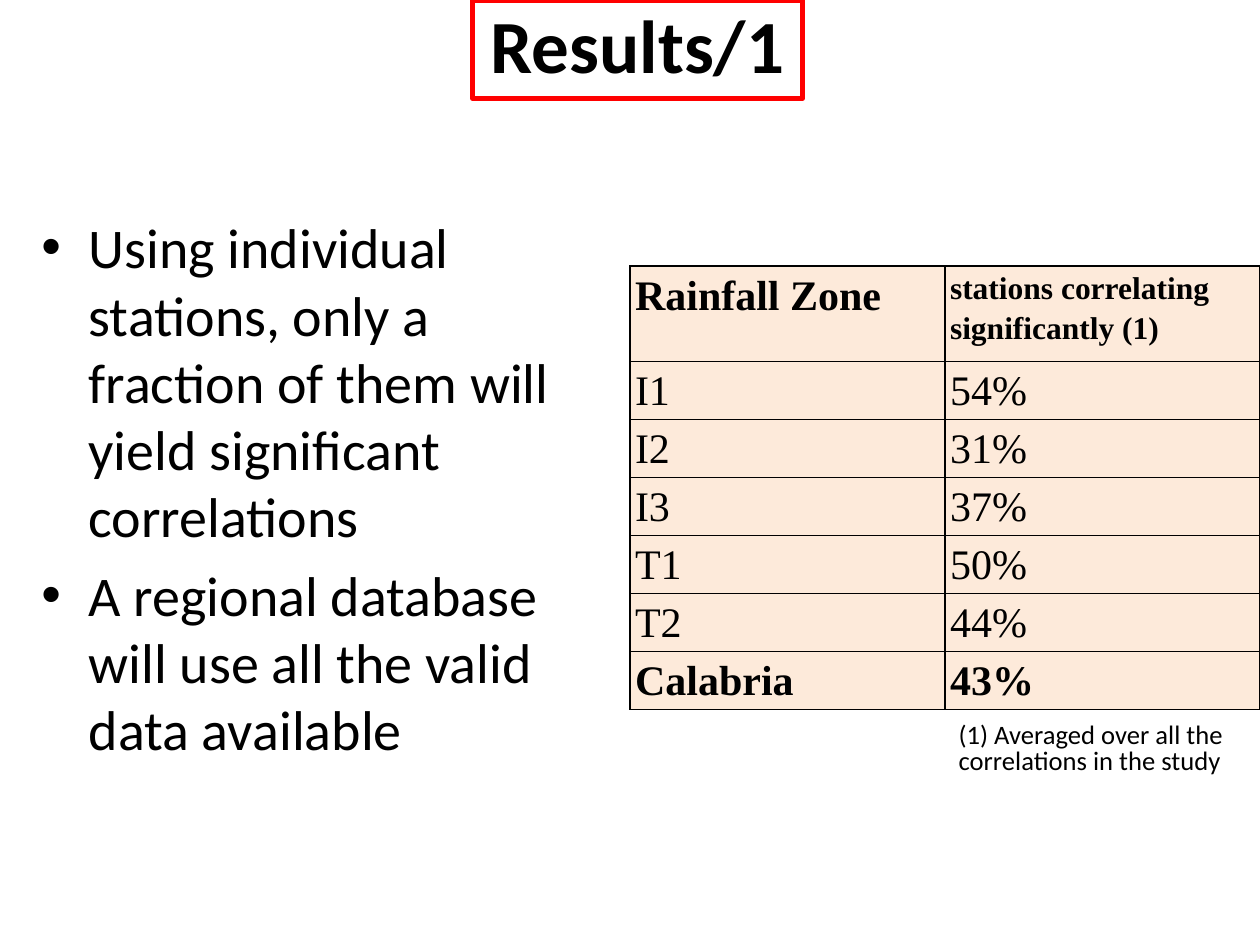
from lxml.etree import SubElement
from pptx import Presentation
from pptx.dml.color import RGBColor
from pptx.enum.shapes import MSO_SHAPE
from pptx.enum.text import MSO_ANCHOR, PP_ALIGN
from pptx.oxml.ns import qn
from pptx.util import Inches, Pt

BLACK = RGBColor(0x00, 0x00, 0x00)
RED = RGBColor(0xFF, 0x00, 0x00)
PEACH = RGBColor(0xFD, 0xEA, 0xDA)

# The page is a grid of 100 columns by 75 rows of square units.
UNIT = Inches(0.1)

BULLETS = [
    "Using individual stations, only a fraction of them will yield "
    "significant correlations",
    "A regional database will use all the valid data available",
]
ZONES = [
    ("Rainfall Zone", "stations correlating significantly (1)"),
    ("I1", "54%"),
    ("I2", "31%"),
    ("I3", "37%"),
    ("T1", "50%"),
    ("T2", "44%"),
    ("Calabria", "43%"),
]


def units(*counts):
    """Turn grid units into lengths."""
    return [round(count * UNIT) for count in counts]


def add_span(para, text, size, font="Calibri", bold=False):
    span = para.add_run()
    span.text = text
    span.font.name = font
    span.font.size = Pt(size)
    span.font.bold = bold
    span.font.color.rgb = BLACK


def indent(para, left, first):
    """Set the left margin and first-line indent, in grid units."""
    margin, hanging = units(left, first)
    properties = para._p.get_or_add_pPr()
    properties.set("marL", str(margin))
    properties.set("indent", str(hanging))
    return properties


def add_text_frame(page, box):
    frame = page.shapes.add_textbox(*units(*box)).text_frame
    frame.word_wrap = True
    return frame


def add_title(page, box, text):
    title = page.shapes.add_shape(MSO_SHAPE.RECTANGLE, *units(*box))
    title.shadow.inherit = False
    title.fill.background()
    title.line.color.rgb = RED
    title.line.width = Pt(3)
    frame = title.text_frame
    frame.word_wrap = True
    frame.vertical_anchor = MSO_ANCHOR.MIDDLE
    para = frame.paragraphs[0]
    para.alignment = PP_ALIGN.CENTER
    para.line_spacing = 0.9
    add_span(para, text, 42.9, bold=True)


def add_bullets(page, box, items):
    frame = add_text_frame(page, box)
    for index, item in enumerate(items):
        para = frame.add_paragraph() if index else frame.paragraphs[0]
        properties = indent(para, 3.75, -3.75)
        SubElement(properties, qn("a:buFont")).set("typeface", "Arial")
        SubElement(properties, qn("a:buChar")).set("char", "•")
        if index:
            para.space_before = Pt(6.4)
        add_span(para, item, 32)


def outline_cell(cell):
    properties = cell._tc.get_or_add_tcPr()
    for side in ("a:lnL", "a:lnR", "a:lnT", "a:lnB"):
        line = SubElement(properties, qn(side))
        line.set("w", str(Pt(1)))
        fill = SubElement(line, qn("a:solidFill"))
        SubElement(fill, qn("a:srgbClr")).set("val", str(BLACK))


def add_zone_table(page, box, rows):
    header_height, row_height = units(7.6, 4.2)
    table = page.shapes.add_table(len(rows), len(rows[0]), *units(*box)).table
    last = len(rows) - 1
    for r, values in enumerate(rows):
        table.rows[r].height = row_height if r else header_height
        for c, value in enumerate(values):
            cell = table.cell(r, c)
            outline_cell(cell)
            cell.fill.solid()
            cell.fill.fore_color.rgb = PEACH
            cell.margin_left, cell.margin_right = units(0.4, 0.4)
            cell.margin_top = cell.margin_bottom = 0
            para = cell.text_frame.paragraphs[0]
            para.line_spacing = 1.15
            size = 18 if (r, c) == (0, 1) else 24
            add_span(para, value, size, "Times New Roman", r in (0, last))


def add_footnote(page, box, text):
    para = add_text_frame(page, box).paragraphs[0]
    indent(para, 5.6, 0)
    para.line_spacing = 0.8
    add_span(para, text, 15.2)


def main():
    deck = Presentation()
    deck.slide_width, deck.slide_height = units(100, 75)
    page = deck.slides.add_slide(deck.slide_layouts[6])
    add_bullets(page, (2.3, 16.4, 43.8, 55.5), BULLETS)
    add_zone_table(page, (50, 21.1, 50, 32.8), ZONES)
    add_title(page, (37.5, 0, 26.2, 7.8), "Results/1")
    add_footnote(page, (69.5, 57, 30.5, 7),
                 "(1) Averaged over all the correlations in the study")
    deck.save("out.pptx")


if __name__ == "__main__":
    main()
